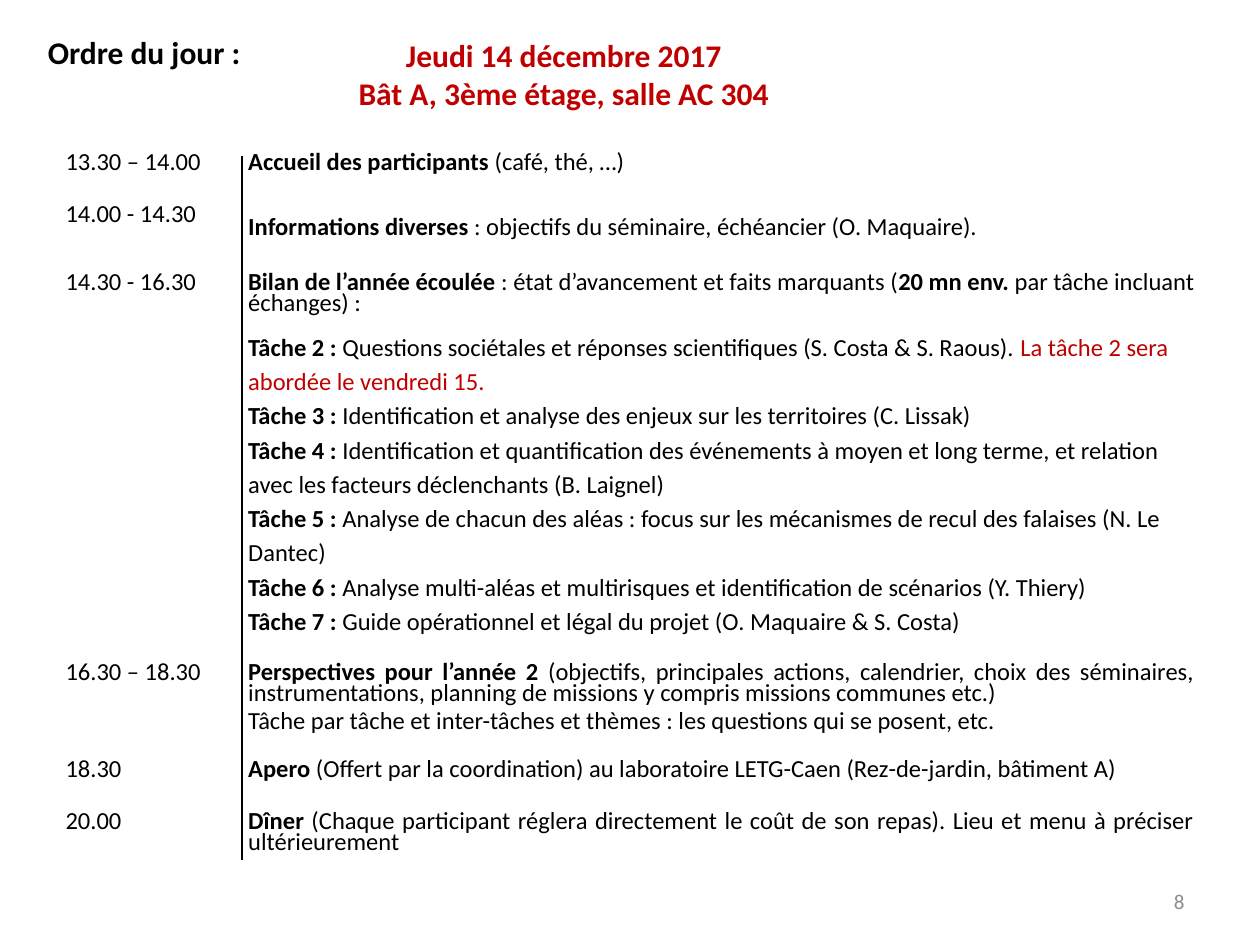
import pptx
import pptx.util
import pptx.dml.color
import pptx.enum.text
import pptx.oxml
import pptx.oxml.ns

Inches = pptx.util.Inches
Pt = pptx.util.Pt
ALIGN = pptx.enum.text.PP_ALIGN
ANCHOR = pptx.enum.text.MSO_ANCHOR

FONT = "Calibri"
COLORS = {"text": "000000", "accent": "C00000", "number": "8C8C8C"}

COLUMN_WIDTHS = [1.45, 7.61]
ROW_HEIGHTS = [0.41, 0.54, 3.10, 0.77, 0.41, 0.36]

TASKS = [
    ("Tâche 2 :", " Questions sociétales et réponses scientifiques (S. Costa & S. Raous). ",
     "La tâche 2 sera abordée le vendredi 15."),
    ("Tâche 3 :", " Identification et analyse des enjeux sur les territoires (C. Lissak)"),
    ("Tâche 4 :", " Identification et quantification des événements à moyen et long terme, "
     "et relation avec les facteurs déclenchants (B. Laignel)"),
    ("Tâche 5 :", " Analyse de chacun des aléas : focus sur les mécanismes de recul "
     "des falaises (N. Le Dantec)"),
    ("Tâche 6 :", " Analyse multi-aléas et multirisques et identification de scénarios (Y. Thiery)"),
    ("Tâche 7 :", " Guide opérationnel et légal du projet (O. Maquaire & S. Costa)"),
]


def add_span(para, text, size=14, bold=False, color="text"):
    span = para.add_run()
    span.text = text
    span.font.name = FONT
    span.font.size = Pt(size)
    span.font.bold = bold
    span.font.color.rgb = pptx.dml.color.RGBColor.from_string(COLORS[color])


def entry(*spans, align=ALIGN.JUSTIFY, line=Pt(12), before=0, after=6):
    return {"spans": spans, "align": align, "line": line, "before": before, "after": after}


def bold(text):
    return {"text": text, "bold": True}


def plain(text, color="text"):
    return {"text": text, "color": color}


def task_entry(label, subject, remark=None):
    spans = [bold(label), plain(subject)]
    if remark:
        spans.append(plain(remark, "accent"))
    return entry(*spans, align=ALIGN.LEFT, line=1.15, after=0)


def agenda():
    return [
        ("13.30 – 14.00", [
            entry(bold("Accueil des participants "), plain("(café, thé, …)"), align=ALIGN.LEFT)]),
        ("14.00 - 14.30", [
            entry(bold("Informations diverses "),
                  plain(": objectifs du séminaire, échéancier (O. Maquaire)."),
                  line=1.15, after=0)]),
        ("14.30 - 16.30", [
            entry(bold("Bilan de l’année écoulée "),
                  plain(": état d’avancement et faits marquants ("),
                  bold("20 mn env."), plain(" par tâche incluant échanges) :")),
            *(task_entry(*task) for task in TASKS)]),
        ("16.30 – 18.30", [
            entry(bold("Perspectives pour l’année 2 "),
                  plain("(objectifs, principales actions, calendrier, choix des séminaires, "
                        "instrumentations, planning de missions y compris missions communes etc.) "),
                  before=4, after=4),
            entry(plain("Tâche par tâche et inter-tâches et thèmes : "
                        "les questions qui se posent, etc."), after=4)]),
        ("18.30", [
            entry(bold("Apero"), plain(" (Offert par la coordination) au laboratoire "
                                       "LETG-Caen (Rez-de-jardin, bâtiment A)"))]),
        ("20.00", [
            entry(bold("Dîner"), plain(" (Chaque participant réglera directement le coût de son "
                                       "repas). Lieu et menu à préciser ultérieurement"))]),
    ]


def fill_title(page):
    title = page.shapes.title
    title.left, title.top = Inches(0.28), Inches(0.21)
    title.width, title.height = Inches(8.98), Inches(0.4)
    frame = title.text_frame
    frame.auto_size = pptx.enum.text.MSO_AUTO_SIZE.NONE
    frame.vertical_anchor = ANCHOR.TOP
    para = frame.paragraphs[0]
    para.alignment = ALIGN.LEFT
    add_span(para, "Ordre du jour :", 18, True)


def add_text(page, left, top, width, height, lines, align, wrap=True, **style):
    box = page.shapes.add_textbox(Inches(left), Inches(top), Inches(width), Inches(height))
    frame = box.text_frame
    frame.word_wrap = wrap
    frame.vertical_anchor = ANCHOR.MIDDLE
    for index, line in enumerate(lines):
        para = frame.add_paragraph() if index else frame.paragraphs[0]
        para.alignment = align
        add_span(para, line, **style)


def set_borders(cell, ruled_side):
    properties = cell._tc.get_or_add_tcPr()
    solid = f'<a:solidFill><a:srgbClr val="{COLORS["text"]}"/></a:solidFill>'
    for index, side in enumerate(["lnL", "lnR", "lnT", "lnB"]):
        paint = solid if side == ruled_side else "<a:noFill/>"
        properties.insert(index, pptx.oxml.parse_xml(
            f'<a:{side} {pptx.oxml.ns.nsdecls("a")} w="{Pt(1)}">{paint}</a:{side}>'))


def fill_cell(cell, entries, ruled_side):
    cell.margin_left = cell.margin_right = Inches(0.05)
    cell.margin_top = cell.margin_bottom = 0
    cell.fill.background()
    set_borders(cell, ruled_side)
    frame = cell.text_frame
    for index, item in enumerate(entries):
        para = frame.add_paragraph() if index else frame.paragraphs[0]
        para.alignment = item["align"]
        para.line_spacing = item["line"]
        para.space_before = Pt(item["before"])
        para.space_after = Pt(item["after"])
        for span in item["spans"]:
            add_span(para, **span)


def add_agenda(page):
    rows = agenda()
    table = page.shapes.add_table(
        len(rows), len(COLUMN_WIDTHS), Inches(0.47), Inches(1.24),
        Inches(sum(COLUMN_WIDTHS)), Inches(sum(ROW_HEIGHTS))).table
    table.first_row = table.horz_banding = False
    for column, width in zip(table.columns, COLUMN_WIDTHS):
        column.width = Inches(width)
    for index, (time, entries) in enumerate(rows):
        table.rows[index].height = Inches(ROW_HEIGHTS[index])
        fill_cell(table.cell(index, 0), [entry(plain(time), align=ALIGN.LEFT)], "lnR")
        fill_cell(table.cell(index, 1), entries, "lnL")


def main():
    deck = pptx.Presentation()
    deck.slide_width, deck.slide_height = Inches(10), Inches(7.5)
    page = deck.slides.add_slide(deck.slide_layouts[5])
    fill_title(page)
    add_text(page, 2.73, 0.23, 3.49, 0.71,
             ["Jeudi 14 décembre 2017", "Bât A, 3ème étage, salle AC 304"],
             ALIGN.CENTER, wrap=False, size=18, bold=True, color="accent")
    add_agenda(page)
    add_text(page, 7.17, 6.95, 2.33, 0.4, ["8"], ALIGN.RIGHT, size=12, color="number")
    deck.save("out.pptx")


if __name__ == "__main__":
    main()
